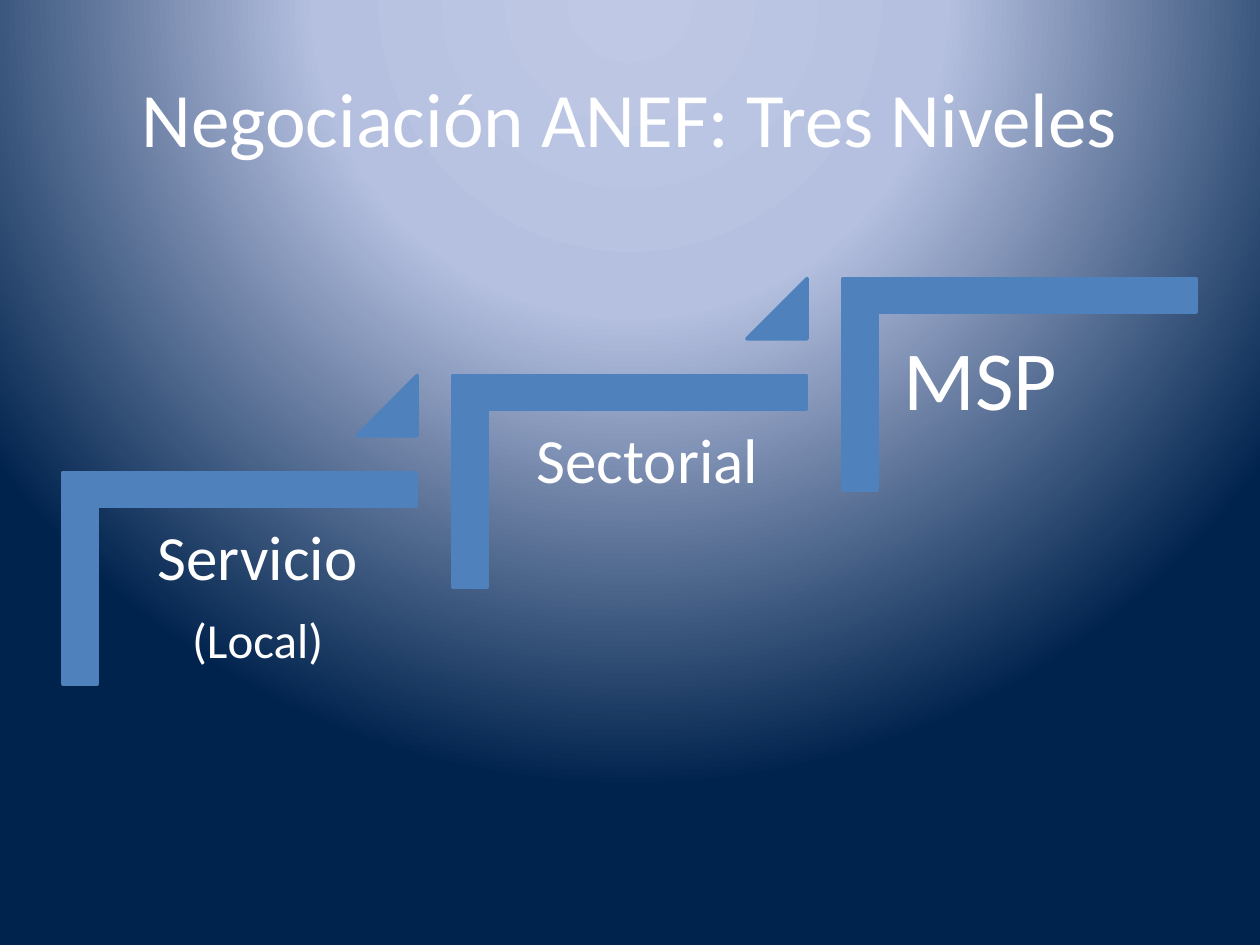
from pptx import Presentation
from pptx import util as u
from pptx.dml.color import RGBColor
from pptx.enum import shapes, text
from pptx.oxml import parse_xml
from pptx.oxml.ns import nsdecls

Pt = u.Pt
BLUE, WHITE = "4F81BD", "FFFFFF"


def paint(sp, color):
    sp.shadow.inherit = False
    sp.fill.solid()
    sp.fill.fore_color.rgb = sp.line.color.rgb = RGBColor.from_string(color)
    sp.line.width = Pt(2)


def add_run(p, words, size, color=WHITE):
    r = p.add_run()
    r.text = words
    r.font.name = "Calibri"
    r.font.size = Pt(size)
    r.font.color.rgb = RGBColor.from_string(color)


prs = Presentation()
prs.slide_width, prs.slide_height = Pt(720), Pt(540)
s = prs.slides.add_slide(prs.slide_layouts[5])

# Background: circular gradient centred above the slide
stops = "".join(
    f'<a:gs pos="{pos * 1000}"><a:srgbClr val="{color}"/></a:gs>'
    for pos, color in ((0, "BFC9E5"), (40, "B5C0E0"), (100, "00234D"))
)
s.element.cSld.insert(0, parse_xml(
    f'<p:bg {nsdecls("p", "a")}><p:bgPr><a:gradFill rotWithShape="1">'
    f'<a:gsLst>{stops}</a:gsLst><a:path path="circle">'
    '<a:fillToRect l="50000" t="-80000" r="50000" b="180000"/></a:path>'
    '</a:gradFill><a:effectLst/></p:bgPr></p:bg>'
))

# Title
title = s.shapes.title
title.left, title.top, title.width, title.height = Pt(36), Pt(21.6), Pt(648), Pt(90)
title.text_frame.vertical_anchor = text.MSO_ANCHOR.MIDDLE
p = title.text_frame.paragraphs[0]
p.alignment = text.PP_ALIGN.CENTER
add_run(p, "Negociación ANEF: Tres Niveles", 44)

# Staircase: each level moves right and up by the same step
STEP_X, STEP_Y = 222.8, 55.4
CENTER, LEFT = text.PP_ALIGN.CENTER, text.PP_ALIGN.LEFT
levels = [
    ([("Servicio", 36), ("(Local)", 28)], CENTER, 10.8),
    ([("Sectorial", 36)], CENTER, 10.8),
    ([("MSP", 48)], LEFT, 14.4),
]
for i, (lines, align, inset) in enumerate(levels):
    dx, dy = i * STEP_X, -i * STEP_Y

    # Stair corner
    corner = s.shapes.add_shape(shapes.MSO_SHAPE.CORNER, Pt(76.4 + dx),
                                Pt(229.6 + dy), Pt(121), Pt(201.6))
    corner.rotation = 90
    corner.adjustments[0] = corner.adjustments[1] = 0.16
    paint(corner, BLUE)

    # Level name
    box = s.shapes.add_textbox(Pt(56.2 + dx), Pt(289.6 + dy), Pt(182), Pt(160))
    tf = box.text_frame
    tf.word_wrap = True
    tf.margin_left = tf.margin_right = tf.margin_top = tf.margin_bottom = Pt(inset)
    for n, (words, size) in enumerate(lines):
        p = tf.add_paragraph() if n else tf.paragraphs[0]
        p.alignment = align
        p.line_spacing = 0.9
        p.space_after = Pt(0.35 * size)
        add_run(p, words, size)

    # Triangle pointing to the next level
    if i < len(levels) - 1:
        tri = s.shapes.add_shape(shapes.MSO_SHAPE.ISOSCELES_TRIANGLE,
                                 Pt(204 + dx), Pt(214.6 + dy), Pt(34.4), Pt(34.4))
        tri.adjustments[0] = 1
        paint(tri, BLUE)

prs.save("out.pptx")
